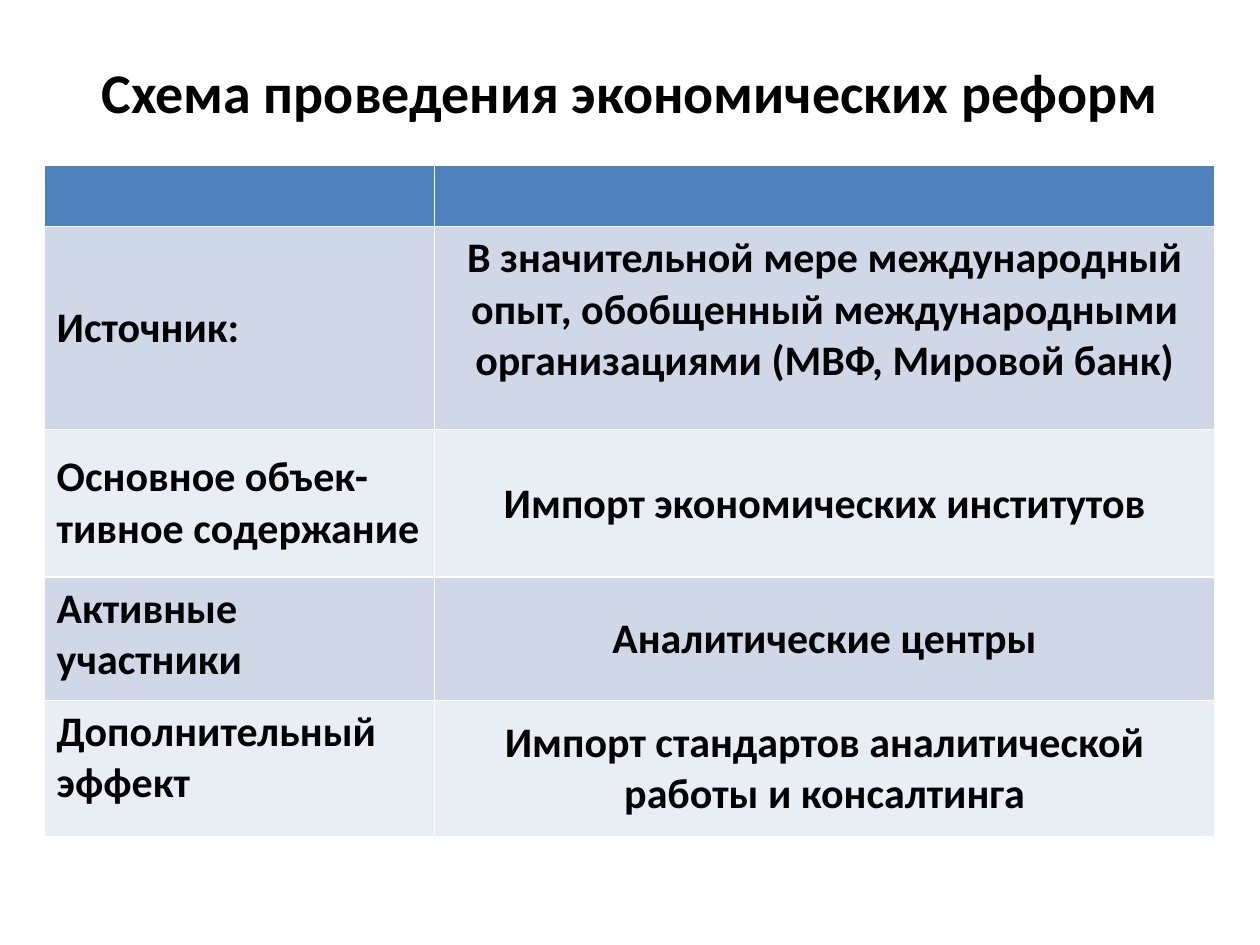
from pptx import Presentation
from pptx import util as u
from pptx.dml import color
from pptx.enum import text

PX = 9144  # EMU in one px, 100 px to the inch
MID, TOP = text.MSO_ANCHOR.MIDDLE, text.MSO_ANCHOR.TOP
LEFT, CENTER = text.PP_ALIGN.LEFT, text.PP_ALIGN.CENTER


def tint(hue):
    """Turn a hex string into a colour."""
    return color.RGBColor.from_string(hue)


def write(frame, words, size, align):
    frame.text = words
    para = frame.paragraphs[0]
    para.alignment = align
    font = para.runs[0].font
    form = {"name": "Calibri", "size": u.Pt(size), "bold": True}
    for key, val in form.items():
        setattr(font, key, val)
    font.color.rgb = tint("000000")


deck = Presentation()
deck.slide_width, deck.slide_height = 1000 * PX, 750 * PX
slide = deck.slides.add_slide(deck.slide_layouts[5])

title = slide.shapes.title
place = {"left": 50, "top": 30, "width": 900, "height": 85}
for key, val in place.items():
    setattr(title, key, val * PX)
title.text_frame.vertical_anchor = MID
write(title.text_frame, "Схема проведения экономических реформ", 32, CENTER)

# Label, its anchor, answer, its anchor
rows = [
    ("Источник:", MID,
     "В значительной мере международный опыт, обобщенный "
     "международными организациями (МВФ, Мировой банк)", TOP),
    ("Основное объек-тивное содержание", MID,
     "Импорт экономических институтов", MID),
    ("Активные участники", TOP, "Аналитические центры", MID),
    ("Дополнительный эффект", TOP,
     "Импорт стандартов аналитической работы и консалтинга", MID),
]
wide = [310, 619]
high = [49, 161, 117, 98, 108]
grid = slide.shapes.add_table(
    len(high), len(wide), 35 * PX, 131 * PX, sum(wide) * PX, sum(high) * PX
).table
for col, val in zip(grid.columns, wide):
    col.width = val * PX
for row, val in zip(grid.rows, high):
    row.height = val * PX

hues = ["4F81BD"] + ["D0D8E8", "E9EDF4"] * 2
for row, hue in zip(grid.rows, hues):
    for cell in row.cells:
        cell.fill.solid()
        cell.fill.fore_color.rgb = tint(hue)

slim = {"margin_left": PX, "margin_top": PX, "margin_right": PX, "margin_bottom": 0}
for i, (label, side, answer, anchor) in enumerate(rows, 1):
    name, body = grid.cell(i, 0), grid.cell(i, 1)
    write(name.text_frame, label, 24, LEFT)
    write(body.text_frame, answer, 24, CENTER)
    name.vertical_anchor, body.vertical_anchor = side, anchor
    if i > 1:
        for key, val in slim.items():
            setattr(body, key, val)

deck.save("out.pptx")
